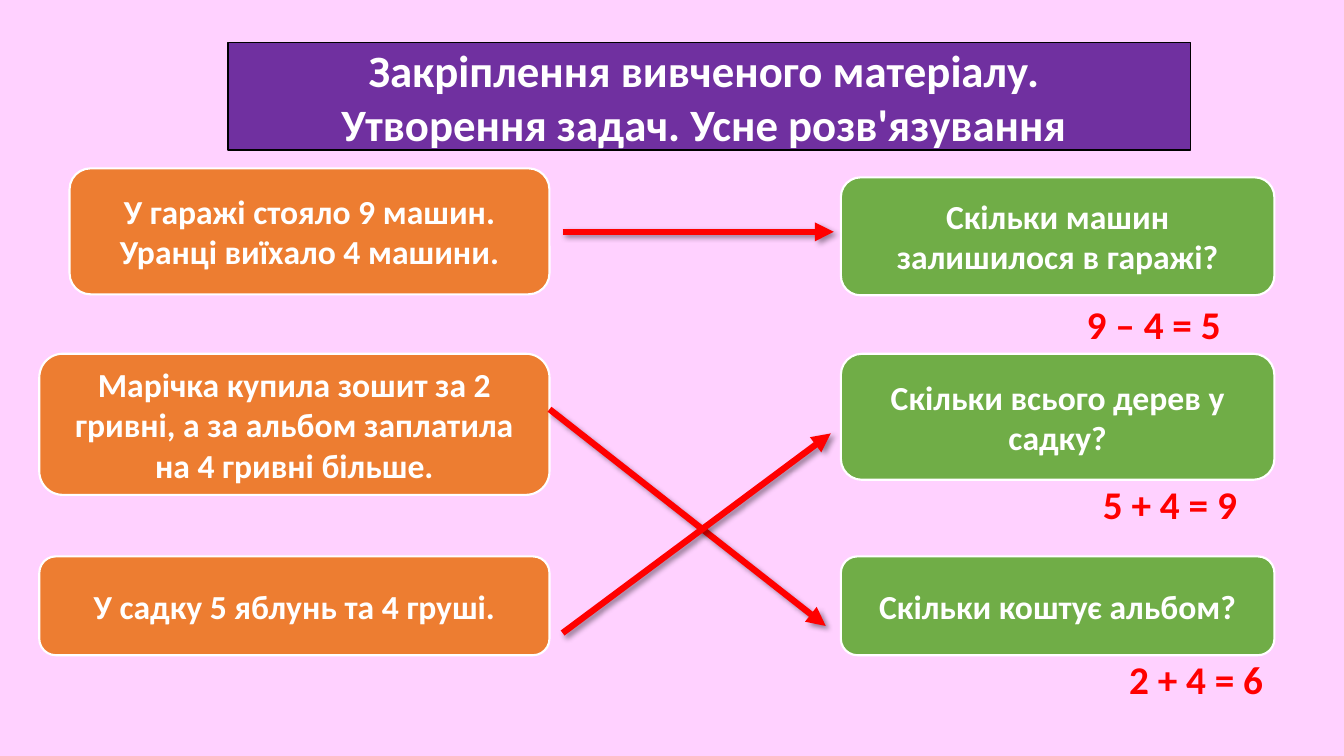
from lxml.etree import SubElement
from pptx import Presentation
from pptx.dml.color import RGBColor
from pptx.enum.shapes import MSO_CONNECTOR, MSO_SHAPE
from pptx.enum.text import MSO_ANCHOR, MSO_AUTO_SIZE, PP_ALIGN
from pptx.oxml.ns import qn
from pptx.util import Inches, Pt

WHITE, RED = "FFFFFF", "FF0000"
ORANGE, GREEN = "ED7D31", "70AD47"

TITLE = ["Закріплення вивченого матеріалу. ", "Утворення задач. Усне розв'язування "]
CONDITIONS = [
    ((0.69, 1.67, 4.76, 1.25), ["У гаражі стояло 9 машин.", "Уранці виїхало 4 машини."]),
    ((0.39, 3.51, 5.06, 1.4),
     ["Марічка купила зошит за 2 гривні, а за альбом заплатила на 4 гривні більше."]),
    ((0.39, 5.52, 5.06, 0.98), ["У садку 5 яблунь та 4 груші."]),
]
QUESTIONS = [
    ((8.34, 1.76, 4.3, 1.17), ["Скільки машин залишилося в гаражі?"]),
    ((8.34, 3.51, 4.3, 1.25), ["Скільки всього дерев у садку?"]),
    ((8.34, 5.52, 4.3, 0.98), ["Скільки коштує альбом?"]),
]
ARROWS = [(5.58, 2.3, 8.27, 2.3), (5.45, 4.06, 8.19, 6.21), (5.58, 6.28, 8.24, 4.3)]
ANSWERS = [
    ((10.68, 2.93, 1.96, 0.57), "9 – 4 = 5"),
    ((10.84, 4.72, 1.65, 0.57), "5 + 4 = 9"),
    ((11.1, 6.45, 1.65, 0.57), "2 + 4 = 6"),
]


def color(value):
    """Turn a hex string into a colour."""
    return RGBColor.from_string(value)


def inches(lengths):
    """Turn a tuple of numbers into lengths."""
    return [Inches(length) for length in lengths]


def write(frame, lines, size, ink, align):
    """Fill a text frame with bold paragraphs."""
    frame.word_wrap = True
    for index, line in enumerate(lines):
        para = frame.add_paragraph() if index else frame.paragraphs[0]
        para.text = line
        para.alignment = align
        para.font.name = "Calibri"
        para.font.size = Pt(size)
        para.font.bold = True
        para.font.color.rgb = color(ink)


def add_card(page, box, lines, fill, size=24, kind=MSO_SHAPE.ROUNDED_RECTANGLE,
             border=WHITE, width=1.5):
    """Draw a filled shape with centred white text."""
    card = page.shapes.add_shape(kind, *inches(box))
    card.shadow.inherit = False
    card.fill.solid()
    card.fill.fore_color.rgb = color(fill)
    card.line.color.rgb = color(border)
    card.line.width = Pt(width)
    card.text_frame.vertical_anchor = MSO_ANCHOR.MIDDLE
    write(card.text_frame, lines, size, WHITE, PP_ALIGN.CENTER)


def add_arrow(page, ends):
    """Draw a red arrow with a soft shadow."""
    arrow = page.shapes.add_connector(MSO_CONNECTOR.STRAIGHT, *inches(ends))
    arrow.line.color.rgb = color(RED)
    arrow.line.width = Pt(4.5)
    properties = arrow._element.spPr
    SubElement(properties.find(qn("a:ln")), qn("a:tailEnd"), type="triangle")
    effects = SubElement(properties, qn("a:effectLst"))
    shadow = SubElement(effects, qn("a:outerShdw"), blurRad=str(Pt(4)), dist=str(Pt(3)),
                        dir=str(45 * 60000), algn="tl", rotWithShape="0")
    shade = SubElement(shadow, qn("a:srgbClr"), val="000000")
    SubElement(shade, qn("a:alpha"), val="40000")


def add_answer(page, box, text):
    """Write a red equation."""
    answer = page.shapes.add_textbox(*inches(box))
    write(answer.text_frame, [text], 28, RED, PP_ALIGN.LEFT)
    answer.text_frame.auto_size = MSO_AUTO_SIZE.SHAPE_TO_FIT_TEXT


def add_matching_page(deck):
    """Build the page that joins conditions to questions."""
    page = deck.slides.add_slide(deck.slide_layouts[6])
    page.background.fill.solid()
    page.background.fill.fore_color.rgb = color("FFD1FF")
    add_card(page, (2.26, 0.42, 9.55, 1.07), TITLE, "7030A0", 32,
             MSO_SHAPE.RECTANGLE, "000000", 1)
    for cards, fill in ((CONDITIONS, ORANGE), (QUESTIONS, GREEN)):
        for box, lines in cards:
            add_card(page, box, lines, fill)
    for ends in ARROWS:
        add_arrow(page, ends)
    for box, text in ANSWERS:
        add_answer(page, box, text)


def main():
    """Build and save the deck."""
    deck = Presentation()
    deck.slide_width, deck.slide_height = inches((13.33, 7.5))
    add_matching_page(deck)
    deck.save("out.pptx")


if __name__ == "__main__":
    main()
